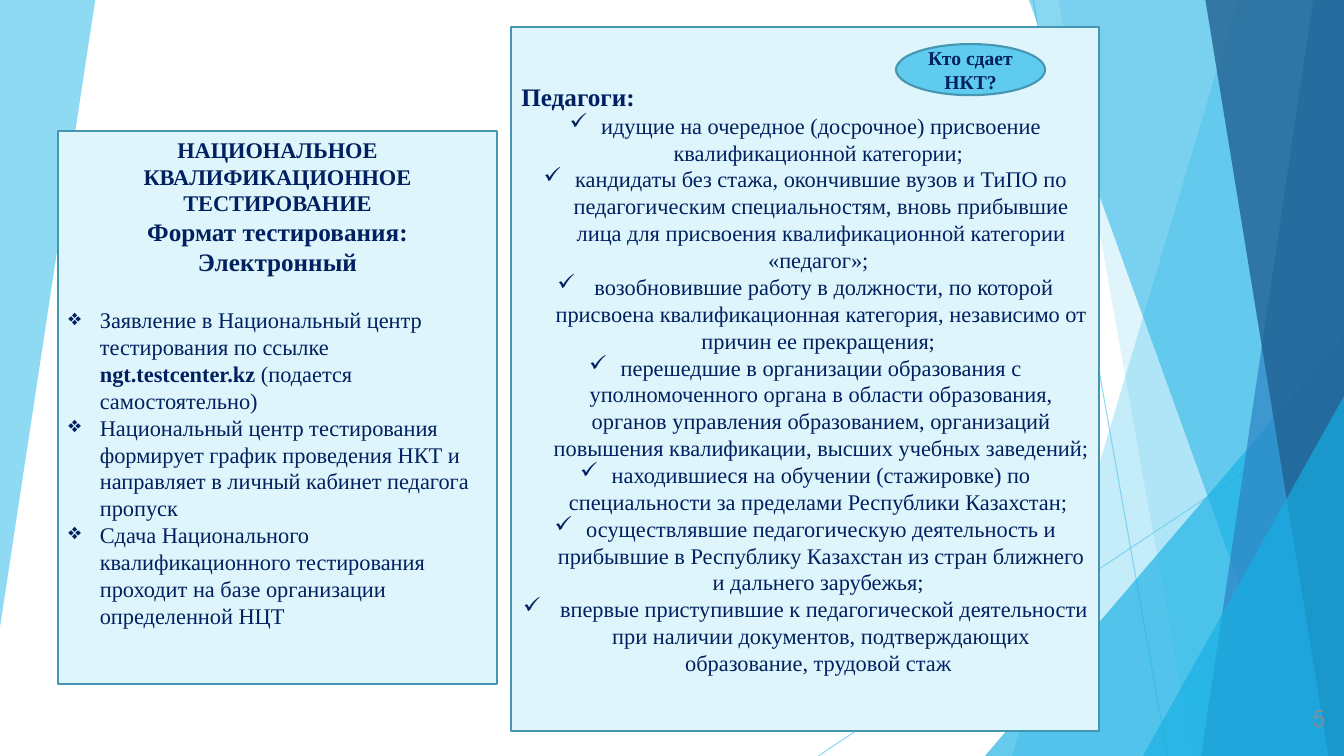
from lxml import etree
from pptx import Presentation
from pptx.dml.color import RGBColor
from pptx.enum import shapes, text
from pptx.oxml.ns import qn
from pptx.util import Pt

W, H = 960, 540
SERIF, SANS = "Times New Roman", "TeX Gyre Adventor"
COLORS = {
    "sky": "5FCBEF", "azure": "17B0E4", "blue": "2E83C3", "deep": "226292",
    "panel": "DFF5FC", "border": "4696B1", "navy": "002060", "grey": "8C8C8C",
}
LEFT, CENTER, RIGHT = text.PP_ALIGN.LEFT, text.PP_ALIGN.CENTER, text.PP_ALIGN.RIGHT
TOP, MIDDLE = text.MSO_ANCHOR.TOP, text.MSO_ANCHOR.MIDDLE
INDENT = 22.5

STEPS = [
    [("Заявление в Национальный центр тестирования по ссылке ", False),
     ("ngt.testcenter.kz ", True), ("(подается самостоятельно)", False)],
    "Национальный центр тестирования формирует график проведения НКТ и "
    "направляет в личный кабинет педагога пропуск",
    "Сдача Национального квалификационного тестирования проходит на базе "
    "организации определенной НЦТ",
]
TEACHERS = [
    "идущие на очередное (досрочное) присвоение квалификационной категории; ",
    "кандидаты без стажа, окончившие вузов и ТиПО по педагогическим "
    "специальностям, вновь прибывшие лица для присвоения квалификационной "
    "категории «педагог»; ",
    " возобновившие работу в должности, по которой присвоена квалификационная "
    "категория, независимо от причин ее прекращения; ",
    "перешедшие в организации образования с уполномоченного органа в области "
    "образования, органов управления образованием, организаций повышения "
    "квалификации, высших учебных заведений; ",
    "находившиеся на обучении (стажировке) по специальности за пределами "
    "Республики Казахстан; ",
    "осуществлявшие педагогическую деятельность и прибывшие в Республику "
    "Казахстан из стран ближнего и дальнего зарубежья; ",
    " впервые приступившие к педагогической деятельности при наличии "
    "документов, подтверждающих образование, трудовой стаж ",
]


def rgb(name):
    return RGBColor.from_string(COLORS[name])


def set_alpha(fill, percent):
    for clr in fill.iter(qn("a:srgbClr")):
        etree.SubElement(clr, qn("a:alpha"), val=str(percent * 1000))


def paint(sp, fill, alpha=100, line=None):
    sp.shadow.inherit = False
    sp.fill.solid()
    sp.fill.fore_color.rgb = rgb(fill)
    if alpha < 100:
        set_alpha(sp._element.spPr, alpha)
    if line:
        sp.line.color.rgb = rgb(line)
        sp.line.width = Pt(1.5)
    else:
        sp.line.fill.background()


def add_facet(s, points, fill, alpha):
    pts = [(Pt(x), Pt(y)) for x, y in points]
    builder = s.shapes.build_freeform(*pts[0])
    builder.add_line_segments(pts[1:], close=True)
    paint(builder.convert_to_shape(), fill, alpha)


def add_shape(s, kind, x, y, w, h, fill, alpha=100, line=None):
    sp = s.shapes.add_shape(kind, Pt(x), Pt(y), Pt(w), Pt(h))
    paint(sp, fill, alpha, line)
    return sp


def add_corner(s, x, y):
    sp = add_shape(s, shapes.MSO_SHAPE.ISOSCELES_TRIANGLE, x, y, W - x, H - y, "azure", 66)
    sp.adjustments[0] = 1


def add_ray(s, x1, y1, x2, y2):
    ray = s.shapes.add_connector(
        shapes.MSO_CONNECTOR.STRAIGHT, Pt(x1), Pt(y1), Pt(x2), Pt(y2))
    ray.line.color.rgb = rgb("sky")
    ray.line.width = Pt(0.75)
    sppr = ray._element.spPr
    set_alpha(sppr, 70)
    etree.SubElement(sppr, qn("a:effectLst"))


def set_frame(sp, anchor):
    tf = sp.text_frame
    tf.word_wrap = True
    tf.vertical_anchor = anchor
    return tf


def add_text(tf, content, size=16, bold=False, align=CENTER, font=SERIF,
             color="navy", bullet=None, before=0):
    """Add a paragraph; content is a string or a list of (string, bold)."""
    p = tf.paragraphs[0]
    if p.runs:
        p = tf.add_paragraph()
    p.alignment = align
    p.space_before = Pt(before)
    if bullet:
        ppr = p._p.get_or_add_pPr()
        ppr.set("marL", str(Pt(INDENT)))
        ppr.set("indent", str(-Pt(INDENT)))
        etree.SubElement(ppr, qn("a:buChar"), char=bullet)
    runs = [(content, bold)] if isinstance(content, str) else content
    for words, is_bold in runs:
        r = p.add_run()
        r.text = words
        r.font.size = Pt(size)
        r.font.bold = is_bold
        r.font.name = font
        r.font.color.rgb = rgb(color)


def add_backdrop(s):
    add_facet(s, [(0, 0), (68, 0), (0, 448)], "sky", 70)
    add_ray(s, 738, 0, 834, H)
    add_ray(s, W, 290, 584.5, H)

    # Facets reaching the right edge: top x, bottom x, colour, opacity
    def band(top, bottom, fill, alpha):
        add_facet(s, [(top, 0), (W, 0), (W, H), (bottom, H)], fill, alpha)

    band(884, 723, "sky", 36)
    band(756, 852, "sky", 20)
    add_corner(s, 703.5, 240)
    band(735, 929.5, "azure", 50)
    band(938, 858, "blue", 70)
    band(861, 949, "deep", 80)
    add_corner(s, 816.5, 283)


def main():
    prs = Presentation()
    prs.slide_width, prs.slide_height = Pt(W), Pt(H)
    s = prs.slides.add_slide(prs.slide_layouts[6])
    add_backdrop(s)
    rect = shapes.MSO_SHAPE.RECTANGLE

    # Test format panel
    tf = set_frame(add_shape(s, rect, 41.75, 93.5, 313, 395, "panel", line="border"), TOP)
    add_text(tf, "НАЦИОНАЛЬНОЕ КВАЛИФИКАЦИОННОЕ ТЕСТИРОВАНИЕ", bold=True)
    add_text(tf, "Формат тестирования:", size=18, bold=True)
    add_text(tf, "Электронный", size=18, bold=True)
    for i, step in enumerate(STEPS):
        add_text(tf, step, align=LEFT, bullet="❖", before=0 if i else 21)

    # Teachers panel
    tf = set_frame(add_shape(s, rect, 365.25, 19.25, 420, 502.75, "panel", line="border"), MIDDLE)
    add_text(tf, "Педагоги:", size=18, bold=True, align=LEFT)
    for teacher in TEACHERS:
        add_text(tf, teacher, bullet="✓")

    # Slide number
    box = s.shapes.add_textbox(Pt(729.5), Pt(499), Pt(224), Pt(28.75))
    add_text(set_frame(box, MIDDLE), "5", align=RIGHT, font=SANS, color="grey")

    # Question badge
    badge = add_shape(s, shapes.MSO_SHAPE.OVAL, 640, 31.5, 106.5, 36.5, "sky", line="border")
    add_text(set_frame(badge, MIDDLE), "Кто сдает НКТ?", size=14, bold=True)

    prs.save("out.pptx")


if __name__ == "__main__":
    main()
